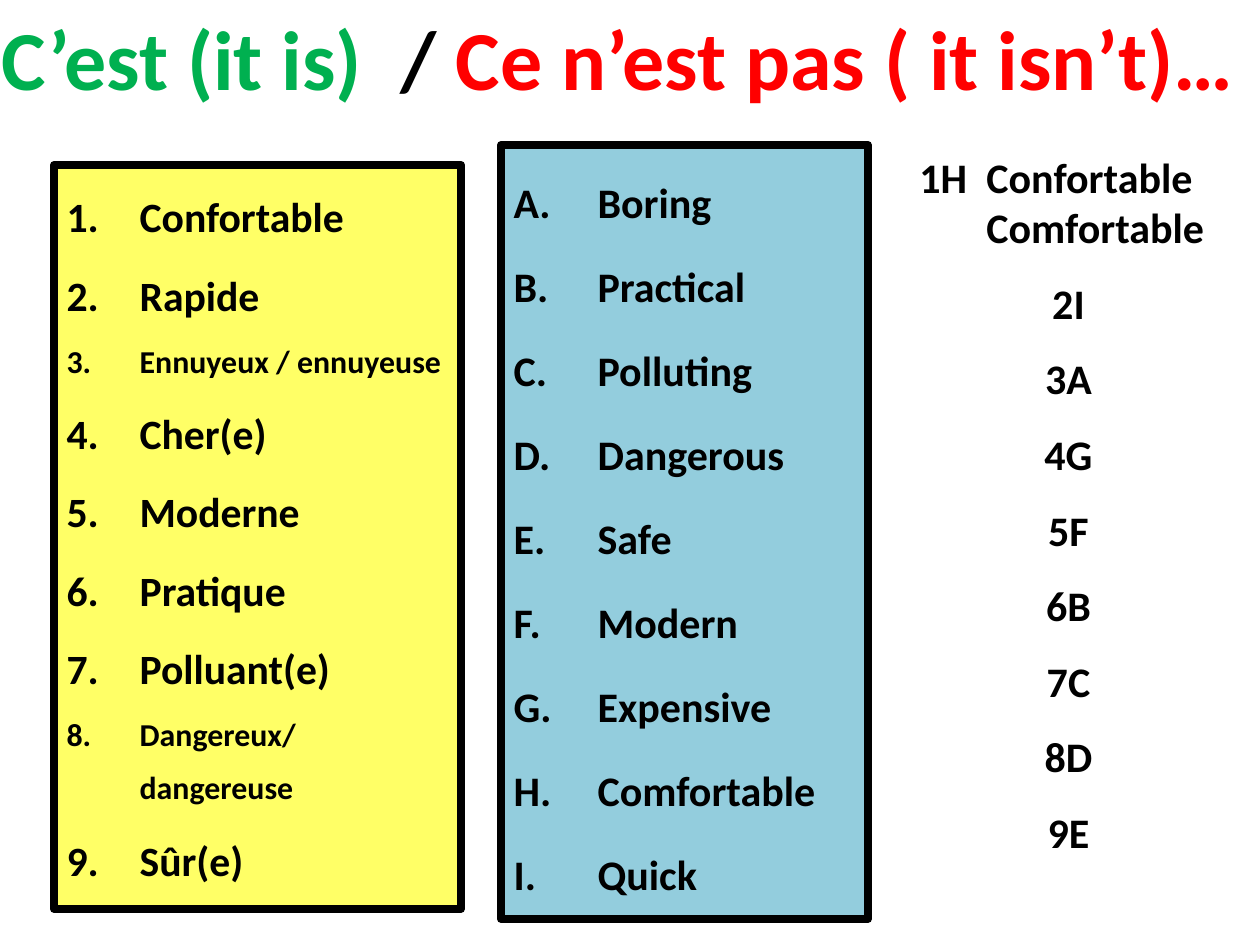
from lxml import etree
from pptx import Presentation
from pptx.dml.color import RGBColor
from pptx.enum.text import MSO_ANCHOR, MSO_AUTO_SIZE, PP_ALIGN
from pptx.oxml.ns import qn
from pptx.util import Inches, Pt

LEFT, CENTER = PP_ALIGN.LEFT, PP_ALIGN.CENTER
TOP = MSO_ANCHOR.TOP
NO_AUTOFIT = MSO_AUTO_SIZE.NONE

BLACK = RGBColor(0x00, 0x00, 0x00)
GREEN = RGBColor(0x00, 0xB0, 0x50)
RED = RGBColor(0xFF, 0x00, 0x00)
YELLOW = RGBColor(0xFF, 0xFF, 0x66)
BLUE = RGBColor(0x93, 0xCD, 0xDD)

FONT = "Calibri"
PX_PER_INCH = 126
TWO_CONTENT_LAYOUT = 3

FRENCH_SIZE, FRENCH_SMALL = 23.8, 18.2
FRENCH = [
    ("Confortable", FRENCH_SIZE),
    ("Rapide", FRENCH_SIZE),
    ("Ennuyeux / ennuyeuse", FRENCH_SMALL),
    ("Cher(e)", FRENCH_SIZE),
    ("Moderne", FRENCH_SIZE),
    ("Pratique", FRENCH_SIZE),
    ("Polluant(e)", FRENCH_SIZE),
    ("Dangereux/dangereuse", FRENCH_SMALL),
    ("Sûr(e)", FRENCH_SIZE),
]
ENGLISH = [
    (word, 24)
    for word in (
        "Boring", "Practical", "Polluting", "Dangerous", "Safe",
        "Modern", "Expensive", "Comfortable", "Quick",
    )
]
FIRST_ANSWER = "1H\tConfortable\vComfortable"
ANSWERS = ["2I", "3A", "4G", "5F", "6B", "7C", "8D", "9E"]


def px(length):
    return round(Inches(length) / PX_PER_INCH)


def place(shape, box):
    """Move the shape to its box and make its text wrap from the top."""
    shape.left, shape.top, shape.width, shape.height = map(px, box)
    frame = shape.text_frame
    frame.word_wrap = True
    frame.auto_size = NO_AUTOFIT
    frame.vertical_anchor = TOP
    return frame


def add_paragraph(frame, runs, *, size=24, align=LEFT, line_spacing=1.0,
                  space_before=0, hanging=0, numbering=None):
    """Write (text, colour) runs into the frame's next paragraph."""
    paragraph = frame.paragraphs[0]
    if paragraph.runs:
        paragraph = frame.add_paragraph()
    paragraph.alignment = align
    paragraph.line_spacing = line_spacing
    paragraph.space_before = Pt(space_before)
    properties = paragraph._p.get_or_add_pPr()
    properties.set("marL", str(px(hanging)))
    properties.set("indent", str(-px(hanging)))
    if numbering:
        etree.SubElement(properties, qn("a:buAutoNum"), type=numbering)
    for text, color in runs:
        for index, line in enumerate(text.split("\v")):
            if index:
                paragraph.add_line_break()
            run = paragraph.add_run()
            run.text = line
            run.font.name = FONT
            run.font.size = Pt(size)
            run.font.bold = True
            run.font.color.rgb = color


def fill_title(title, box):
    frame = place(title, box)
    runs = [("C’est (it is)  ", GREEN), ("/ ", BLACK),
            ("Ce n’est pas ( it isn’t)…", RED)]
    add_paragraph(frame, runs, size=48, align=CENTER)


def fill_word_list(body, box, words, *, fill, numbering, hanging, line_spacing):
    frame = place(body, box)
    frame.margin_right = px(14)
    body.fill.solid()
    body.fill.fore_color.rgb = fill
    body.line.color.rgb = BLACK
    body.line.width = Pt(4.5)
    for word, size in words:
        add_paragraph(frame, [(word, BLACK)], size=size, hanging=hanging,
                      line_spacing=line_spacing, space_before=size * 0.2,
                      numbering=numbering)


def add_answers(slide, box):
    frame = place(slide.shapes.add_textbox(0, 0, 0, 0), box)
    add_paragraph(frame, [(FIRST_ANSWER, BLACK)], hanging=67)
    for answer in ANSWERS:
        add_paragraph(frame, [(answer, BLACK)], align=CENTER, line_spacing=1.5)


def main():
    presentation = Presentation()
    presentation.slide_width = Inches(10)
    presentation.slide_height = Inches(7.5)
    layout = presentation.slide_layouts[TWO_CONTENT_LAYOUT]
    slide = presentation.slides.add_slide(layout)
    title, french, english = slide.placeholders

    fill_title(title, (-24, 0, 1284, 115))
    fill_word_list(french, (54, 165, 407, 744), FRENCH, fill=YELLOW,
                   numbering="arabicPeriod", hanging=73, line_spacing=1.4)
    fill_word_list(english, (501, 145, 367, 774), ENGLISH, fill=BLUE,
                   numbering="alphaUcPeriod", hanging=84, line_spacing=1.5)
    add_answers(slide, (907, 145, 323, 740))
    presentation.save("out.pptx")


if __name__ == "__main__":
    main()
